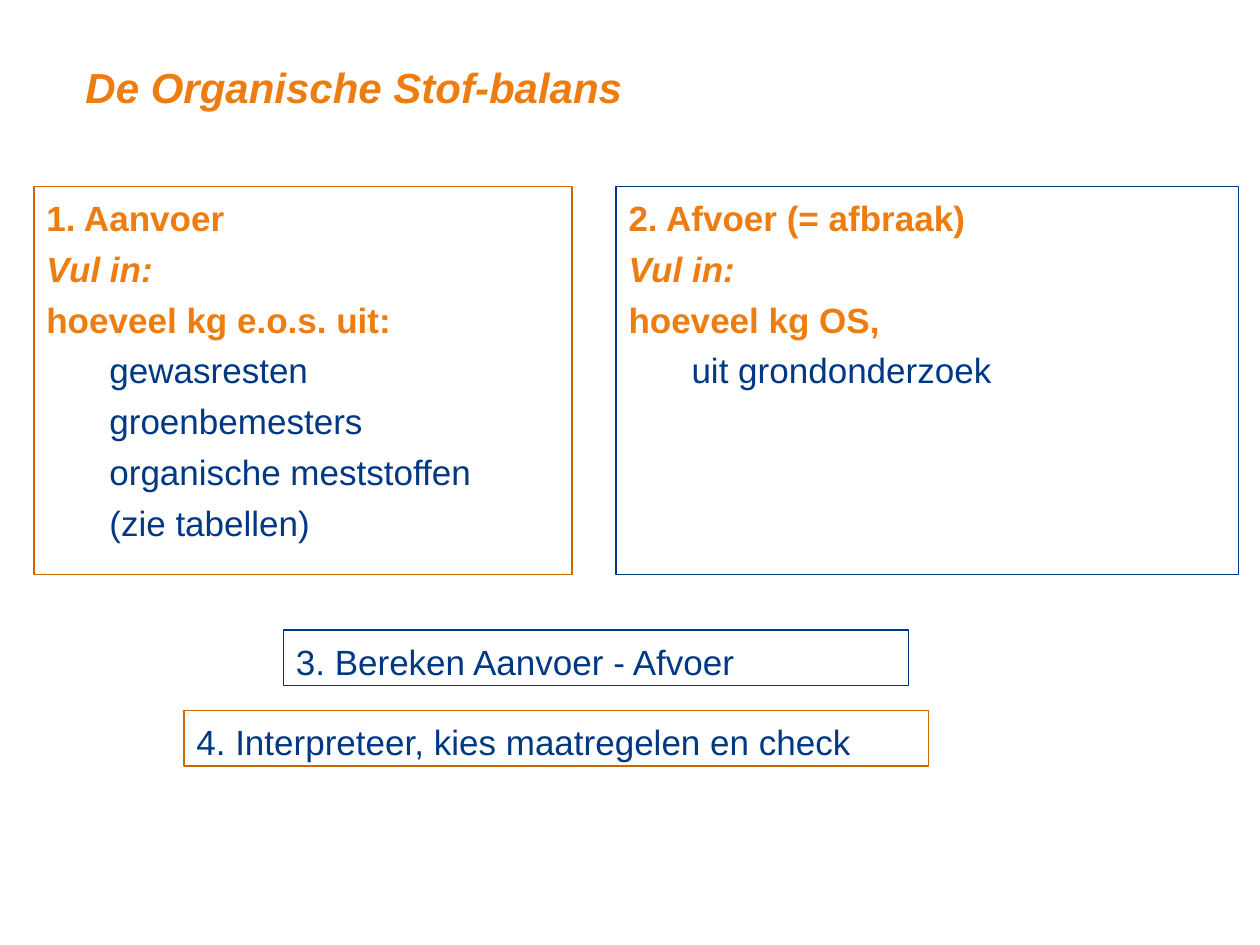
from dataclasses import dataclass

from pptx import Presentation
from pptx.dml.color import RGBColor
from pptx.enum.shapes import MSO_SHAPE
from pptx.enum.text import MSO_ANCHOR, PP_ALIGN
from pptx.util import Inches, Pt


@dataclass(frozen=True)
class Theme:
    font: str = "Arial"
    blue: str = "003883"
    orange: str = "EE7D11"
    rust: str = "CC6600"
    head: int = 24
    body: int = 20
    gap: int = 5
    rule: float = 0.75


THEME = Theme()
CELL = Inches(0.1)  # the slide is a grid of 100 columns by 75 rows


def scale(box):
    return [round(n * CELL) for n in box]


def setup(frame):
    frame.word_wrap = True
    frame.vertical_anchor = MSO_ANCHOR.TOP
    frame.margin_left = frame.margin_right = Inches(0.1)
    frame.margin_top, frame.margin_bottom = Inches(0.08), Inches(0.04)


def style(para, color, size=THEME.body, bold=False, italic=False):
    para.alignment = PP_ALIGN.LEFT
    for run in para.runs:
        font = run.font
        font.name, font.size = THEME.font, Pt(size)
        font.bold, font.italic = bold, italic
        font.color.rgb = RGBColor.from_string(color)


def frame_box(slide, box, edge):
    """Outlined rectangle without fill; returns its text frame."""
    shape = slide.shapes.add_shape(MSO_SHAPE.RECTANGLE, *scale(box))
    shape.shadow.inherit = False
    shape.fill.background()
    shape.line.color.rgb = RGBColor.from_string(edge)
    shape.line.width = Pt(THEME.rule)
    setup(shape.text_frame)
    return shape.text_frame


def add_title(slide, box, text):
    frame = slide.shapes.add_textbox(*scale(box)).text_frame
    setup(frame)
    frame.text = text
    style(frame.paragraphs[0], THEME.orange, THEME.head, bold=True, italic=True)


def add_panel(slide, box, edge, heads, items):
    """Bold headings, the second in italics, then indented items."""
    frame = frame_box(slide, box, edge)
    frame.text = "\n".join(heads + items)
    for i, para in enumerate(frame.paragraphs):
        if i:
            para.space_before = Pt(THEME.gap)
        if i < len(heads):
            style(para, THEME.orange, bold=True, italic=i == 1)
        else:
            para.level = 1
            props = para._p.get_or_add_pPr()
            props.set("marL", str(Inches(0.5)))
            props.set("indent", "0")
            style(para, THEME.blue)


def add_step(slide, box, edge, text):
    frame = frame_box(slide, box, edge)
    frame.text = text
    style(frame.paragraphs[0], THEME.blue)


def main():
    deck = Presentation()
    deck.slide_width, deck.slide_height = 100 * CELL, 75 * CELL
    slide = deck.slides.add_slide(deck.slide_layouts[6])

    # Title
    add_title(slide, (5.8, 4.1, 60.2, 5.7), "De Organische Stof-balans")

    # Supply and removal side by side
    top, high = 14.8, 30.8
    add_panel(slide, (2.7, top, 42.7, high), THEME.rust,
              ["1. Aanvoer", "Vul in:", "hoeveel kg e.o.s. uit:"],
              ["gewasresten", "groenbemesters",
               "organische meststoffen", "(zie tabellen)"])
    add_panel(slide, (48.9, top, 49.4, high), THEME.blue,
              ["2. Afvoer (= afbraak)", "Vul in:", "hoeveel kg OS,"],
              ["uit grondonderzoek"])

    # Follow-up steps at an equal pitch
    steps = [
        (22.5, 49.6, THEME.blue, "3. Bereken Aanvoer - Afvoer"),
        (14.6, 59.1, THEME.rust, "4. Interpreteer, kies maatregelen en check"),
    ]
    for i, (left, wide, edge, text) in enumerate(steps):
        add_step(slide, (left, 50 + 6.4 * i, wide, 4.4), edge, text)

    deck.save("out.pptx")


if __name__ == "__main__":
    main()
